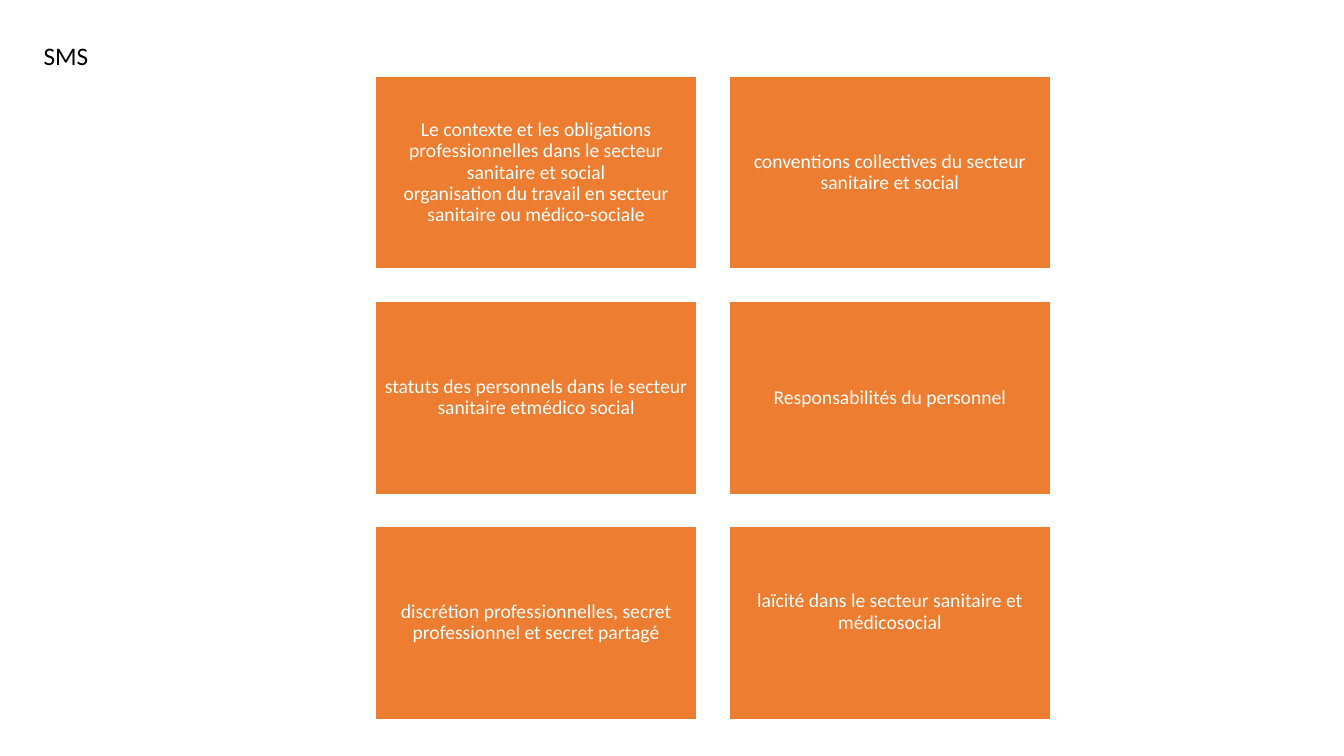
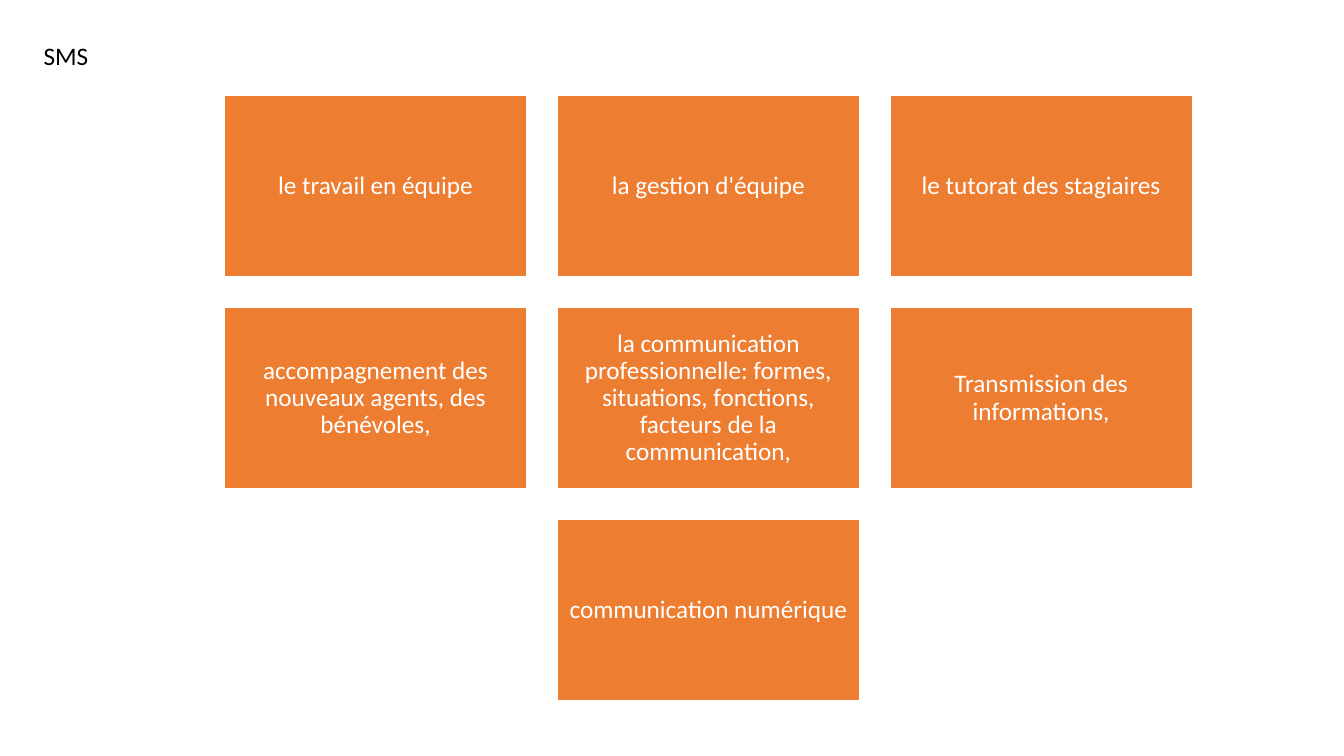
"""Build two slides of topic tiles under a shared heading."""
from pptx import Presentation
from pptx import util as u
from pptx.dml import color
from pptx.enum import shapes, text

FONT = "Calibri"
ORANGE, WHITE, BLACK = "ED7D31", "FFFFFF", "000000"
HEADING = "SMS"
HEADING_BOX = (0.85, 0.9, 8.38, 1.02)
GAP_RATIO = 0.1
HEIGHT_RATIO = 0.6

OBLIGATIONS = [
    "Le contexte et les obligations professionnelles dans le secteur sanitaire et social\n"
    "organisation du travail en secteur sanitaire ou médico-sociale",
    "conventions collectives du secteur sanitaire et social",
    "statuts des personnels dans le secteur sanitaire etmédico social",
    "Responsabilités du personnel",
    "discrétion professionnelles, secret professionnel et secret partagé",
    "laïcité dans le secteur sanitaire et médicosocial",
]
TEAMWORK = [
    "le travail en équipe",
    "la gestion d'équipe",
    "le tutorat des stagiaires",
    "accompagnement des nouveaux agents, des bénévoles,",
    "la communication professionnelle: formes, situations, fonctions, facteurs de la communication,",
    "Transmission des informations,",
    "communication numérique",
]


def paint(target, hex_code):
    """Set a font colour, or a solid colour on a fill."""
    if hasattr(target, "solid"):
        target.solid()
        target = target.fore_color
    else:
        target = target.color
    target.rgb = color.RGBColor.from_string(hex_code)


def write(paragraph, words, size, hex_code):
    """Fill a paragraph with words in the deck's font."""
    paragraph.text = words
    paragraph.font.name = FONT
    paragraph.font.size = u.Pt(size)
    paint(paragraph.font, hex_code)


def add_heading(slide, box):
    """Place the shared heading in the given box."""
    frame = slide.shapes.add_textbox(*map(u.Cm, box)).text_frame
    frame.word_wrap = True
    write(frame.paragraphs[0], HEADING, 18, BLACK)


def add_tile(slide, box, topic, size, inset):
    """Place one orange topic tile in the given box."""
    tile = slide.shapes.add_shape(shapes.MSO_SHAPE.RECTANGLE, *map(u.Cm, box))
    tile.shadow.inherit = False
    paint(tile.fill, ORANGE)
    paint(tile.line.fill, WHITE)
    tile.line.width = u.Pt(1)
    frame = tile.text_frame
    frame.word_wrap = True
    frame.vertical_anchor = text.MSO_ANCHOR.MIDDLE
    frame.margin_left = frame.margin_right = u.Cm(inset)
    frame.margin_top = frame.margin_bottom = u.Cm(inset)
    paragraph = frame.paragraphs[0]
    write(paragraph, topic, size, WHITE)
    paragraph.alignment = text.PP_ALIGN.CENTER
    paragraph.line_spacing = 0.9
    return tile


def add_topic_grid(slide, left, top, width, columns, topics, size, inset):
    """Lay topics out in rows across the width, centring a short last row."""
    tile_width = width / (columns + GAP_RATIO * (columns - 1))
    tile_height = tile_width * HEIGHT_RATIO
    gap = tile_width * GAP_RATIO
    tiles = []
    for index, topic in enumerate(topics):
        row, column = divmod(index, columns)
        missing = max(0, (row + 1) * columns - len(topics))
        x = left + (column + missing / 2) * (tile_width + gap)
        y = top + row * (tile_height + gap)
        tiles.append(add_tile(slide, (x, y, tile_width, tile_height), topic, size, inset))
    return tiles


def add_topic_slide(deck, **grid):
    """Add a slide with the heading and a topic grid, and return its tiles."""
    slide = deck.slides.add_slide(deck.slide_layouts[6])
    add_heading(slide, HEADING_BOX)
    return add_topic_grid(slide, **grid)


def main():
    """Build and save the deck."""
    deck = Presentation()
    deck.slide_width, deck.slide_height = u.Cm(33.87), u.Cm(19.05)
    obligations = add_topic_slide(deck, left=9.46, top=1.92, width=17.02, columns=2,
                                  topics=OBLIGATIONS, size=14, inset=0.15)
    obligations[-1].text_frame.margin_bottom = u.Cm(0.7)
    add_topic_slide(deck, left=5.65, top=2.41, width=24.4, columns=3,
                    topics=TEAMWORK, size=18, inset=0.18)
    deck.save("out.pptx")


if __name__ == "__main__":
    main()
